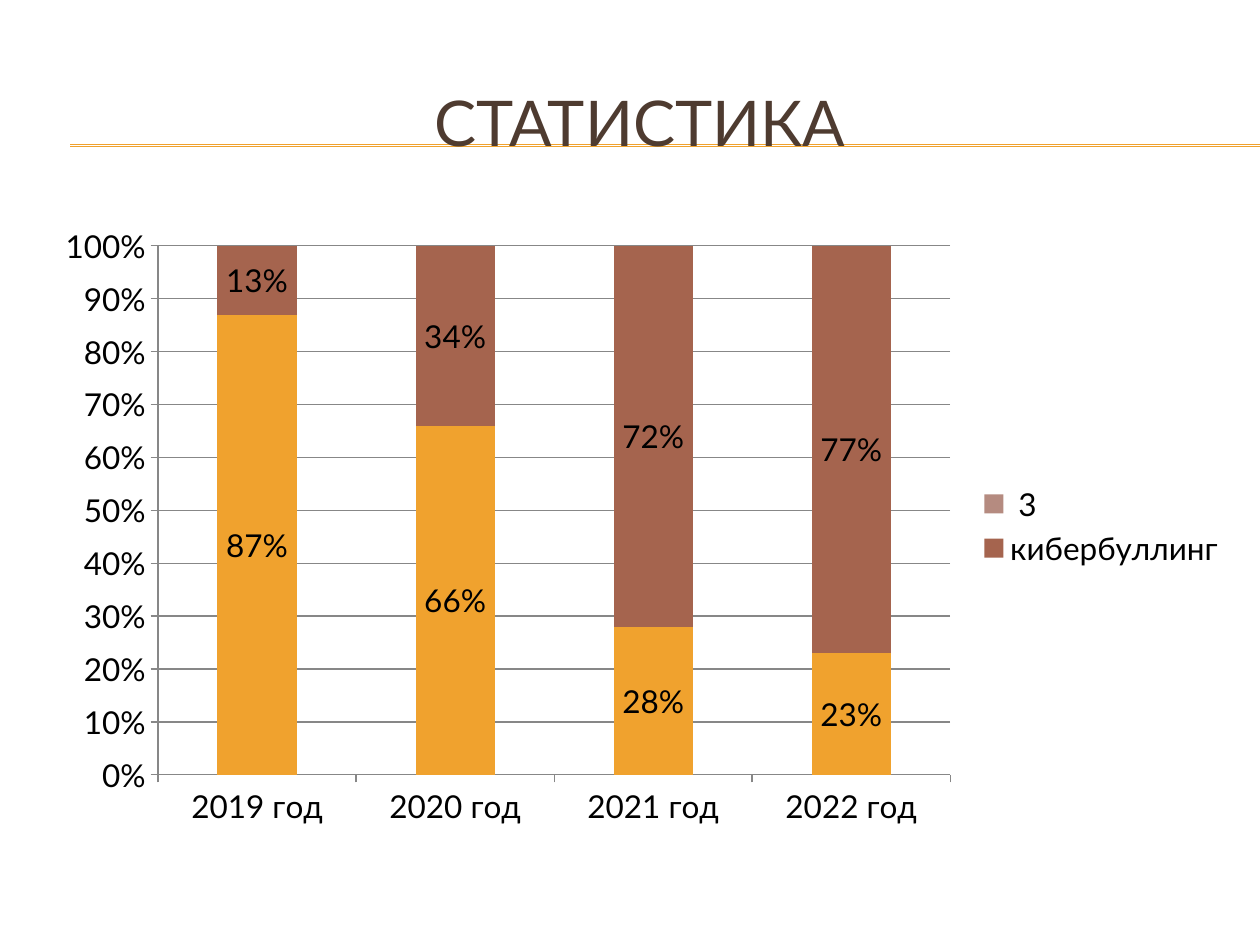
"""Build the statistics slide with a stacked percentage chart."""
from lxml.etree import SubElement
from pptx import Presentation
from pptx.chart.data import CategoryChartData
from pptx.dml.color import RGBColor
from pptx.enum.chart import XL_CHART_TYPE, XL_LEGEND_POSITION, XL_TICK_MARK
from pptx.enum.shapes import MSO_CONNECTOR
from pptx.enum.text import MSO_ANCHOR, PP_ALIGN
from pptx.oxml import parse_xml
from pptx.oxml.ns import nsdecls, qn
from pptx.util import Cm, Pt

ORANGE = RGBColor(0xF0, 0xA2, 0x2E)
BROWN = RGBColor(0xA5, 0x64, 0x4E)
ROSE = RGBColor(0xB5, 0x8B, 0x80)
DARK_BROWN = RGBColor(0x4E, 0x3B, 0x30)
BLACK = RGBColor(0x00, 0x00, 0x00)
GREY = RGBColor(0x87, 0x87, 0x87)
FONT = "Lato"

presentation = Presentation()
presentation.slide_width = Cm(25.4)
presentation.slide_height = Cm(19.05)
slide = presentation.slides.add_slide(presentation.slide_layouts[5])

for top in (2.92, 2.95):
    rule = slide.shapes.add_connector(
        MSO_CONNECTOR.STRAIGHT, Cm(1.42), Cm(top), Cm(25.4), Cm(top)
    )
    rule.line.color.rgb = ORANGE
    rule.line.width = Pt(0.75)
    SubElement(rule.element.spPr, qn("a:effectLst"))

title = slide.shapes.title
title.left, title.top = Cm(0.84), Cm(1.27)
title.width, title.height = Cm(24.13), Cm(2.34)
title.text_frame.vertical_anchor = MSO_ANCHOR.MIDDLE
paragraph = title.text_frame.paragraphs[0]
paragraph.alignment = PP_ALIGN.CENTER
run = paragraph.add_run()
run.text = "СТАТИСТИКА"
run.font.name = FONT
run.font.size = Pt(36)
run.font.color.rgb = DARK_BROWN
slide.shapes.element.append(title.element)

chart_data = CategoryChartData(number_format="0%")
chart_data.categories = ["2019 год", "2020 год", "2021 год", "2022 год"]
chart_data.add_series("Series 1", (0.87, 0.66, 0.28, 0.23))
chart_data.add_series("кибербуллинг", (0.13, 0.34, 0.72, 0.77))
chart_data.add_series(" 3", (None, None, None, None))
chart = slide.shapes.add_chart(
    XL_CHART_TYPE.COLUMN_STACKED_100,
    Cm(0.84), Cm(4.32), Cm(24.13), Cm(12.57), chart_data,
).chart
chart.has_title = False
chart.font.name = FONT
chart.font.size = Pt(18)
chart.font.color.rgb = BLACK

plot = chart.plots[0]
plot.gap_width = 150
plot.overlap = 100
plot.vary_by_categories = False
for series, color in zip(plot.series, (ORANGE, BROWN, ROSE)):
    series.format.fill.solid()
    series.format.fill.fore_color.rgb = color
    labels = series.data_labels
    labels.show_value = True
    labels.number_format = "0%"
    labels.number_format_is_linked = False

for axis in (chart.category_axis, chart.value_axis):
    axis.major_tick_mark = XL_TICK_MARK.OUTSIDE
    axis.minor_tick_mark = XL_TICK_MARK.NONE
    axis.format.line.color.rgb = GREY
    axis.format.line.width = Pt(0.75)
value_axis = chart.value_axis
value_axis.tick_labels.number_format = "0%"
value_axis.tick_labels.number_format_is_linked = False
value_axis.has_major_gridlines = True
value_axis.major_gridlines.format.line.color.rgb = GREY
value_axis.major_gridlines.format.line.width = Pt(0.75)

chart.has_legend = True
legend = chart.legend
legend.position = XL_LEGEND_POSITION.RIGHT
legend.include_in_layout = False
hidden_entry = parse_xml(
    f'<c:legendEntry {nsdecls("c")}><c:idx val="0"/><c:delete val="1"/></c:legendEntry>'
)
chart.element.find(".//" + qn("c:legendPos")).addnext(hidden_entry)

presentation.save("out.pptx")
